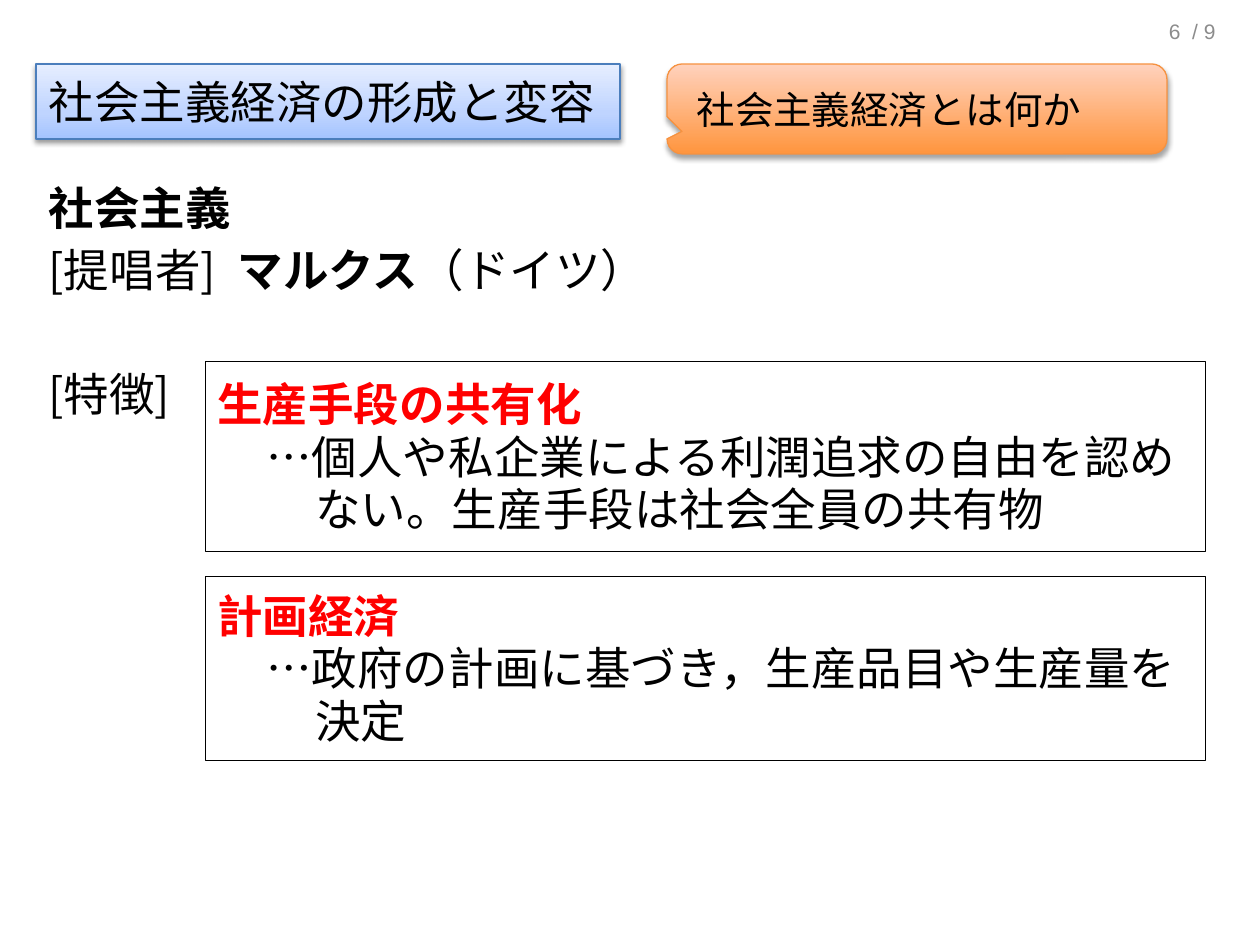
from lxml.etree import SubElement as Sub
from pptx import Presentation
from pptx.dml.color import RGBColor as RGB
from pptx.enum.shapes import MSO_SHAPE as Shape
from pptx.enum.text import MSO_ANCHOR as Anchor, MSO_AUTO_SIZE as Auto, PP_ALIGN as Align
from pptx.oxml.ns import qn
from pptx.util import Emu, Inches, Pt

FONT = "Noto Sans CJK JP"
LEAD, GAP = Pt(30), Pt(5.2)


def px(n):
    return Emu(round(n * 914400 / 126))


def color(code):
    return RGB.from_string(code)


def place(shape, box):
    shape.left, shape.top, shape.width, shape.height = map(px, box)


def setup(shape, anchor=Anchor.MIDDLE):
    """Prepare a text frame and return it."""
    frame = shape.text_frame
    frame.word_wrap = True
    frame.auto_size = Auto.NONE
    frame.vertical_anchor = anchor
    return frame


def style(para, size=26, code="000000", name=FONT, align=Align.LEFT):
    para.alignment = align
    font = para.font
    font.size, font.name = Pt(size), name
    font.color.rgb = color(code)
    Sub(font._element, qn("a:ea"), typeface=name)


def outline(shape, code, width):
    shape.line.color.rgb = color(code)
    shape.line.width = Pt(width)


def shade(shape, stops, edge, alpha, dist):
    """Give a shape an upward gradient, an edge and a soft shadow."""
    shape.fill.gradient()
    shape.fill.gradient_angle = 90
    outline(shape, edge, 0.75)
    shape.shadow.inherit = False
    props = shape._element.spPr
    ramp = props.find(".//" + qn("a:gsLst"))
    for old in list(ramp):
        ramp.remove(old)
    for pos, code in stops:
        stop = Sub(ramp, qn("a:gs"), pos=str(pos * 1000))
        Sub(stop, qn("a:srgbClr"), val=code)
    cast = Sub(props.find(qn("a:effectLst")), qn("a:outerShdw"),
               blurRad=str(Pt(3.1)), dist=str(Pt(dist)), dir="5400000", rotWithShape="0")
    tint = Sub(cast, qn("a:srgbClr"), val="000000")
    Sub(tint, qn("a:alpha"), val=str(alpha * 1000))


def add_title(slide, box, text):
    title = slide.shapes.title
    place(title, box)
    shade(title, [(0, "A4C4FF"), (35, "BFD4FF"), (100, "E6EEFF")], "4B7EBC", 38, 1.6)
    para = setup(title).paragraphs[0]
    para.text = text
    style(para)


def add_callout(slide, box, text):
    note = slide.shapes.add_shape(Shape.ROUNDED_RECTANGULAR_CALLOUT, *map(px, box))
    for i, value in enumerate((-0.47, 0.25, 0.17)):
        note.adjustments[i] = value
    shade(note, [(0, "FF953E"), (100, "FFD2BD")], "F69240", 35, 1.8)
    frame = setup(note)
    frame.margin_left = Inches(0.2)
    para = frame.paragraphs[0]
    para.text = text
    style(para, 22)


def add_body(slide, box, lines, tab):
    """Fill the body placeholder; each line is a list of (text, bold)."""
    body = slide.placeholders[1]
    place(body, box)
    frame = setup(body, Anchor.TOP)
    for i, runs in enumerate(lines):
        para = frame.add_paragraph() if i else frame.paragraphs[0]
        para.line_spacing = LEAD
        para.space_before = GAP if i else Pt(0)
        props = para._p.get_or_add_pPr()
        props.set("marL", "0")
        props.set("indent", "0")
        Sub(props, qn("a:buNone"))
        tabs = Sub(props, qn("a:tabLst"))
        Sub(tabs, qn("a:tab"), pos=str(px(tab)), algn="l")
        style(para)
        for text, bold in runs:
            run = para.add_run()
            run.text, run.font.bold = text, bold


def add_label(slide, box, text, anchor=Anchor.MIDDLE, **look):
    para = setup(slide.shapes.add_textbox(*map(px, box)), anchor).paragraphs[0]
    para.text = text
    para.line_spacing = LEAD if anchor == Anchor.TOP else None
    style(para, **look)


def add_card(slide, box, head, text):
    card = slide.shapes.add_shape(Shape.RECTANGLE, *map(px, box))
    card.shadow.inherit = False
    card.fill.solid()
    card.fill.fore_color.rgb = color("FFFFFF")
    outline(card, "000000", 0.5)
    frame = setup(card)
    first, second = frame.paragraphs[0], frame.add_paragraph()
    for para, words, code in (first, head, "FF0000"), (second, text, "000000"):
        para.text = words
        para.line_spacing = LEAD
        style(para, code=code)
    first.font.bold = True
    props = second._p.get_or_add_pPr()
    props.set("marL", str(px(98)))
    props.set("indent", str(px(-49)))


def main():
    deck = Presentation()
    deck.slide_width, deck.slide_height = px(1260), px(945)
    slide = deck.slides.add_slide(deck.slide_layouts[1])
    left, wide = 36, 1191

    add_title(slide, (left, 64, 584, 75), "社会主義経済の形成と変容")
    add_callout(slide, (667, 64, 500, 90), "社会主義経済とは何か")
    add_body(slide, (left, 176, wide, 281), [
        [("社会主義", True)],
        [("[提唱者]\t", False), ("マルクス", True), ("（ドイツ）", False)],
    ], 256)
    add_label(slide, (left, 362, wide, 78), "[特徴]", Anchor.TOP)

    cards = [
        (362, 190, "生産手段の共有化",
         "…個人や私企業による利潤追求の自由を認めない。生産手段は社会全員の共有物"),
        (576, 185, "計画経済", "…政府の計画に基づき，生産品目や生産量を決定"),
    ]
    for top, high, head, text in cards:
        add_card(slide, (205, top, 1000, high), head, text)

    for x, text in (900, "6"), (935, "/ 9"):
        add_label(slide, (x, 15, 293, 33), text, size=12, code="8C8C8C",
                  name="Arial", align=Align.RIGHT)
    deck.save("out.pptx")


if __name__ == "__main__":
    main()
